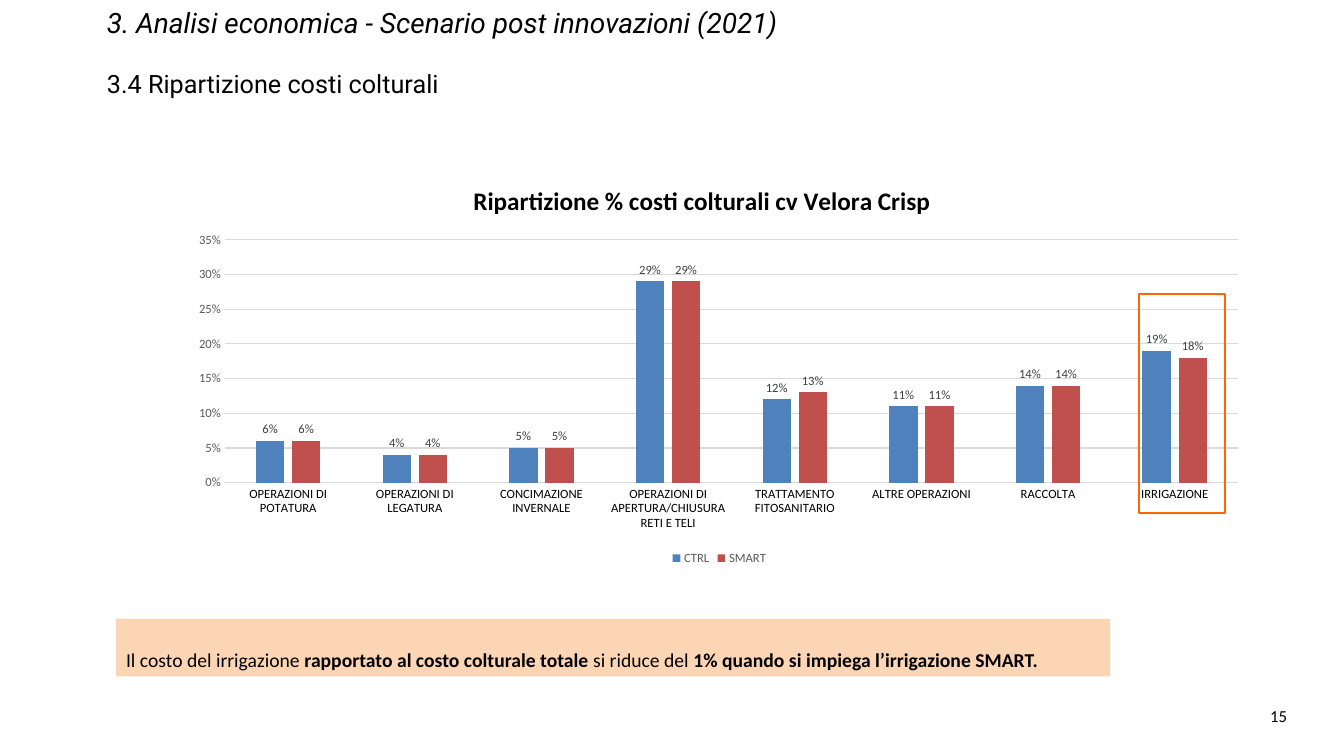
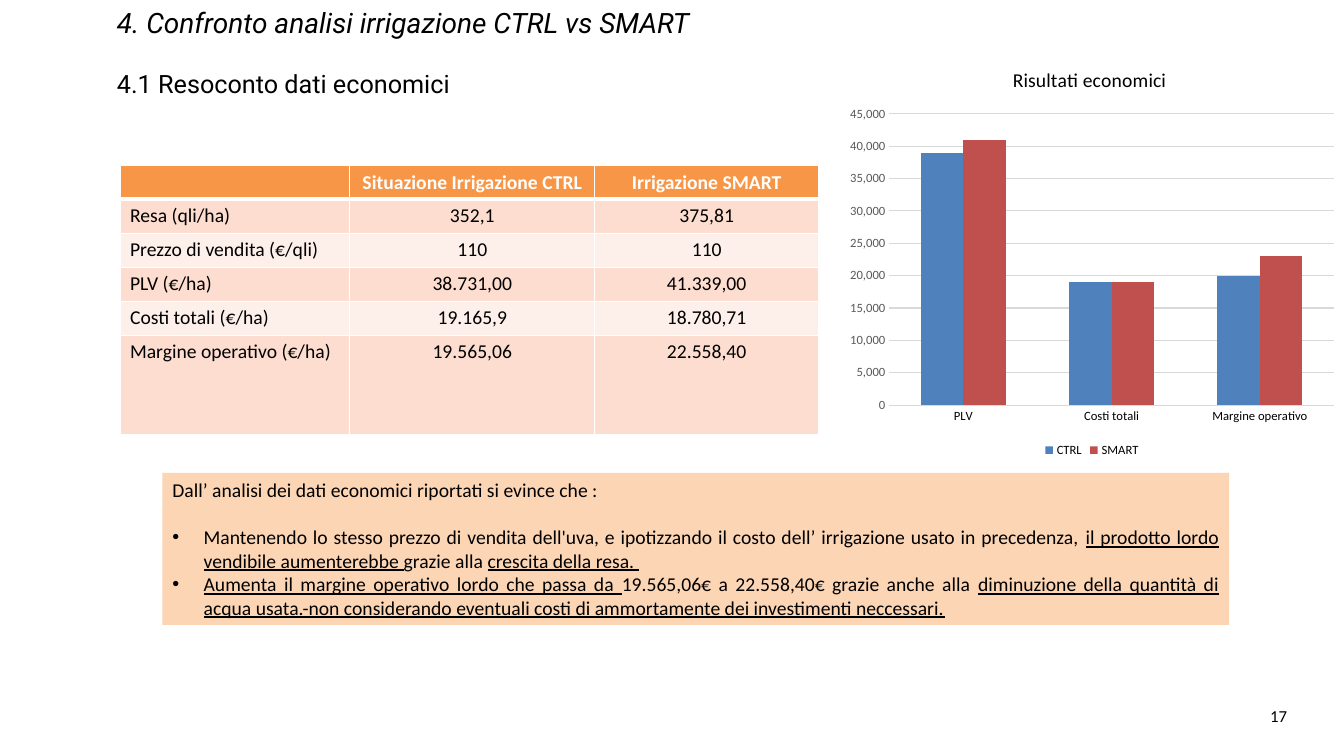
from pptx import Presentation
from pptx.chart.data import CategoryChartData
from pptx.dml.color import RGBColor
from pptx.enum.chart import XL_CHART_TYPE as ChartType, XL_LABEL_POSITION as LabelPosition
from pptx.enum.chart import XL_LEGEND_POSITION as LegendPosition, XL_TICK_MARK as TickMark
from pptx.enum.shapes import MSO_SHAPE as Preset
from pptx.enum.text import MSO_ANCHOR as Anchor, MSO_AUTO_SIZE as AutoSize, PP_ALIGN as Align
from pptx.oxml import parse_xml
from pptx.oxml.ns import nsdecls, qn
from pptx.util import Inches, Pt

COLORS = {
    "text": "000000",
    "white": "FFFFFF",
    "callout": "FCD5B5",
    "header": "F79646",
    "band_dark": "FCDDCF",
    "band_light": "FDEFE9",
    "highlight": "FF6600",
    "grid": "D9D9D9",
    "axis": "595959",
    "label": "404040",
    "CTRL": "4F81BD",
    "SMART": "C0504D",
}
BODY_FONT = "Calibri"
TITLE_FONT = "Roboto"

COST_SHARES = {
    "categories": [
        "OPERAZIONI DI POTATURA", "OPERAZIONI DI LEGATURA", "CONCIMAZIONE INVERNALE",
        "OPERAZIONI DI APERTURA/CHIUSURA RETI E TELI", "TRATTAMENTO FITOSANITARIO",
        "ALTRE OPERAZIONI", "RACCOLTA", "IRRIGAZIONE",
    ],
    "CTRL": [0.06, 0.04, 0.05, 0.29, 0.12, 0.11, 0.14, 0.19],
    "SMART": [0.06, 0.04, 0.05, 0.29, 0.13, 0.11, 0.14, 0.18],
}
RESULTS = {
    "categories": ["PLV", "Costi totali", "Margine operativo"],
    "CTRL": [39000, 19000, 20000],
    "SMART": [41000, 19000, 23000],
}
TABLE_ROWS = [
    ["", "Situazione Irrigazione CTRL", "Irrigazione SMART"],
    ["Resa (qli/ha)", "352,1", "375,81"],
    ["Prezzo di vendita (€/qli)", "110", "110"],
    ["PLV (€/ha)", "38.731,00", "41.339,00"],
    ["Costi totali (€/ha)", "19.165,9", "18.780,71"],
    ["Margine operativo (€/ha)", "19.565,06", "22.558,40"],
]


def rgb(name):
    return RGBColor.from_string(COLORS[name])


def place(shape, left, top, width, height):
    shape.left, shape.top = Inches(left), Inches(top)
    shape.width, shape.height = Inches(width), Inches(height)


def format_font(font, size, color="text", name=BODY_FONT, bold=False, italic=False, underline=False):
    font.size = Pt(size)
    font.name = name
    font.bold = bold
    font.italic = italic
    font.underline = underline
    font.color.rgb = rgb(color)


def add_text(paragraph, text, size=14, align=None, **font_format):
    run = paragraph.add_run()
    run.text = text
    format_font(run.font, size, **font_format)
    if align is not None:
        paragraph.alignment = align


def set_bullet(paragraph, character=None, indent=0.31):
    properties = paragraph._p.get_or_add_pPr()
    margin = Inches(indent) if character else 0
    properties.set("marL", str(margin))
    properties.set("indent", str(-margin))
    bullet = f'<a:buChar {nsdecls("a")} char="{character}"/>' if character else f'<a:buNone {nsdecls("a")}/>'
    properties.append(parse_xml(bullet))


def prepare_frame(shape, anchor=Anchor.TOP):
    frame = shape.text_frame
    frame.word_wrap = True
    frame.auto_size = AutoSize.NONE
    frame.vertical_anchor = anchor
    return frame


def add_slide(presentation, heading, subheading, left, number):
    slide = presentation.slides.add_slide(presentation.slide_layouts[1])
    title = slide.shapes.title
    place(title, left, 0, 9, 1.04)
    frame = prepare_frame(title)
    add_text(frame.paragraphs[0], heading, 20, Align.LEFT, name=TITLE_FONT, italic=True)
    second = frame.add_paragraph()
    second.space_before = Pt(21)
    add_text(second, subheading, 18, Align.LEFT, name=TITLE_FONT)
    box = slide.shapes.add_textbox(Inches(12.5), Inches(6.95), Inches(0.75), Inches(0.4))
    add_text(prepare_frame(box).paragraphs[0], str(number), 12)
    return slide


def fill_callout(slide, bounds, paragraphs, anchor=Anchor.TOP, align=Align.LEFT, gap=0):
    body = slide.placeholders[1]
    place(body, *bounds)
    body.fill.solid()
    body.fill.fore_color.rgb = rgb("callout")
    frame = prepare_frame(body, anchor)
    for index, (bullet, runs) in enumerate(paragraphs):
        paragraph = frame.add_paragraph() if index else frame.paragraphs[0]
        set_bullet(paragraph, bullet)
        paragraph.space_before = Pt(gap if index == 1 else 0)
        for text, run_format in runs:
            add_text(paragraph, text, align=align, **run_format)


def add_highlight(slide, *bounds):
    frame = slide.shapes.add_shape(Preset.RECTANGLE, *map(Inches, bounds))
    frame.shadow.inherit = False
    frame.fill.background()
    frame.line.color.rgb = rgb("highlight")
    frame.line.width = Pt(1.5)


def set_borders(cell, **widths):
    properties = cell._tc.get_or_add_tcPr()
    for index, (side, width) in enumerate(widths.items()):
        properties.insert(index, parse_xml(
            f'<a:ln{side} {nsdecls("a")} w="{Pt(width)}"><a:solidFill>'
            f'<a:srgbClr val="{COLORS["white"]}"/></a:solidFill></a:ln{side}>'
        ))


def add_results_table(slide, rows):
    widths = [2.28, 2.43, 2.22]
    heights = [0.33] * 5 + [0.99]
    table = slide.shapes.add_table(
        len(rows), len(widths), Inches(1.19), Inches(1.64), Inches(sum(widths)), Inches(sum(heights))
    ).table
    for column, width in zip(table.columns, widths):
        column.width = Inches(width)
    for row_index, (texts, height) in enumerate(zip(rows, heights)):
        table.rows[row_index].height = Inches(height)
        header = row_index == 0
        fill = "header" if header else "band_dark" if row_index % 2 else "band_light"
        for column_index, text in enumerate(texts):
            cell = table.cell(row_index, column_index)
            cell.fill.solid()
            cell.fill.fore_color.rgb = rgb(fill)
            set_borders(cell, L=1, R=1, T=3 if row_index == 1 else 1, B=3 if header else 1)
            paragraph = cell.text_frame.paragraphs[0]
            if text:
                add_text(
                    paragraph, text, align=Align.CENTER if column_index else Align.LEFT,
                    color="white" if header else "text", bold=header,
                )
            else:
                paragraph._p.get_or_add_endParaRPr().set("sz", "1400")


def set_layout(element, index, target="", **fractions):
    for layout in element.findall(qn("c:layout")):
        element.remove(layout)
    inner = f'<c:layoutTarget val="{target}"/>' if target else ""
    inner += "".join(f'<c:{side}Mode val="edge"/>' for side in "xy")
    inner += "".join(f'<c:{side} val="{value}"/>' for side, value in fractions.items())
    element.insert(index, parse_xml(
        f'<c:layout {nsdecls("c")}><c:manualLayout>{inner}</c:manualLayout></c:layout>'
    ))


def chart_fractions(bounds, x, y, *size):
    left, top, width, height = bounds
    fractions = {"x": (x - left) / width, "y": (y - top) / height}
    if size:
        fractions.update(w=size[0] / width, h=size[1] / height)
    return fractions


def add_column_chart(slide, bounds, data, title, title_size, title_at, plot_at, number_format,
                     maximum, step, gap, overlap=0, bold=False, labels=False,
                     axis_line=False, legend_color="text"):
    chart_data = CategoryChartData(number_format=number_format)
    chart_data.categories = data["categories"]
    for name in ("CTRL", "SMART"):
        chart_data.add_series(name, data[name])
    chart = slide.shapes.add_chart(ChartType.COLUMN_CLUSTERED, *map(Inches, bounds), chart_data).chart
    format_font(chart.font, 10)
    chart.has_title = True
    add_text(chart.chart_title.text_frame.paragraphs[0], title, title_size, bold=bold)
    chart.has_legend = True
    chart.legend.position = LegendPosition.BOTTOM
    chart.legend.include_in_layout = False
    format_font(chart.legend.font, 9, legend_color)

    plot = chart.plots[0]
    plot.vary_by_categories = False
    plot.gap_width, plot.overlap = gap, overlap
    for series in plot.series:
        series.format.fill.solid()
        series.format.fill.fore_color.rgb = rgb(series.name)
    if labels:
        plot.has_data_labels = True
        plot.data_labels.show_value = True
        plot.data_labels.position = LabelPosition.OUTSIDE_END
        plot.data_labels.number_format = number_format
        plot.data_labels.number_format_is_linked = False
        format_font(plot.data_labels.font, 9, "label")

    for axis, color in ((chart.category_axis, "text"), (chart.value_axis, "axis")):
        axis.major_tick_mark = axis.minor_tick_mark = TickMark.NONE
        axis.format.line.fill.background()
        format_font(axis.tick_labels.font, 9, color)
    lines = [chart.value_axis.major_gridlines.format.line]
    if axis_line:
        lines.append(chart.category_axis.format.line)
    for line in lines:
        line.color.rgb = rgb("grid")
        line.width = Pt(0.75)
    value_axis = chart.value_axis
    value_axis.minimum_scale, value_axis.maximum_scale = 0, maximum
    value_axis.major_unit = step
    value_axis.tick_labels.number_format = number_format
    value_axis.tick_labels.number_format_is_linked = False

    root = chart.element.find(qn("c:chart"))
    set_layout(root.find(qn("c:title")), 1, **chart_fractions(bounds, *title_at))
    set_layout(root.find(qn("c:plotArea")), 0, "inner", **chart_fractions(bounds, *plot_at))


def build_cost_slide(presentation):
    slide = add_slide(presentation, "3. Analisi economica - Scenario post innovazioni (2021)",
                      "3.4 Ripartizione costi colturali", 0.96, 15)
    fill_callout(slide, (1.15, 6.14, 9.86, 0.57), [
        (None, [
            ("Il costo del irrigazione ", {}),
            ("rapportato al costo colturale totale ", {"bold": True}),
            ("si riduce del ", {}),
            ("1% quando si impiega l’irrigazione SMART.", {"bold": True}),
        ]),
    ], anchor=Anchor.BOTTOM)
    add_column_chart(
        slide, (1.77, 1.64, 10.73, 4.01), COST_SHARES,
        "Ripartizione % costi colturali cv Velora Crisp", 18, (4.65, 1.77),
        (2.23, 2.38, 10.05, 2.41), "0%", 0.35, 0.05, 219, overlap=-27,
        bold=True, labels=True, axis_line=True, legend_color="axis",
    )
    add_highlight(slide, 11.3, 2.92, 0.85, 2.17)


def build_comparison_slide(presentation):
    slide = add_slide(presentation, "4. Confronto analisi irrigazione CTRL vs SMART",
                      "4.1 Resoconto dati economici", 1.06, 17)
    add_results_table(slide, TABLE_ROWS)
    underlined = {"underline": True}
    fill_callout(slide, (1.61, 4.69, 10.58, 1.51), [
        (None, [("Dall’ analisi dei dati economici riportati si evince che :", {})]),
        ("•", [
            ("Mantenendo lo stesso prezzo di vendita dell'uva, e ipotizzando il costo "
             "dell’ irrigazione usato in precedenza, ", {}),
            ("il prodotto lordo vendibile aumenterebbe ", underlined),
            ("grazie alla ", {}),
            ("crescita della resa. ", underlined),
        ]),
        ("•", [
            ("Aumenta il margine operativo lordo che passa da ", underlined),
            ("19.565,06€ a 22.558,40€ grazie anche alla ", {}),
            ("diminuzione della quantità di acqua usata.-non considerando eventuali costi "
             "di ammortamente dei investimenti neccessari.", underlined),
        ]),
    ], align=Align.JUSTIFY, gap=17)
    add_column_chart(
        slide, (8.33, 0.5, 5, 4.08), RESULTS, "Risultati economici", 14, (10.01, 0.62),
        (8.82, 1.13, 4.41, 2.89), "#,##0", 45000, 5000, 150,
    )


def main():
    presentation = Presentation()
    presentation.slide_width, presentation.slide_height = Inches(13.33), Inches(7.5)
    build_cost_slide(presentation)
    build_comparison_slide(presentation)
    presentation.save("out.pptx")


if __name__ == "__main__":
    main()
